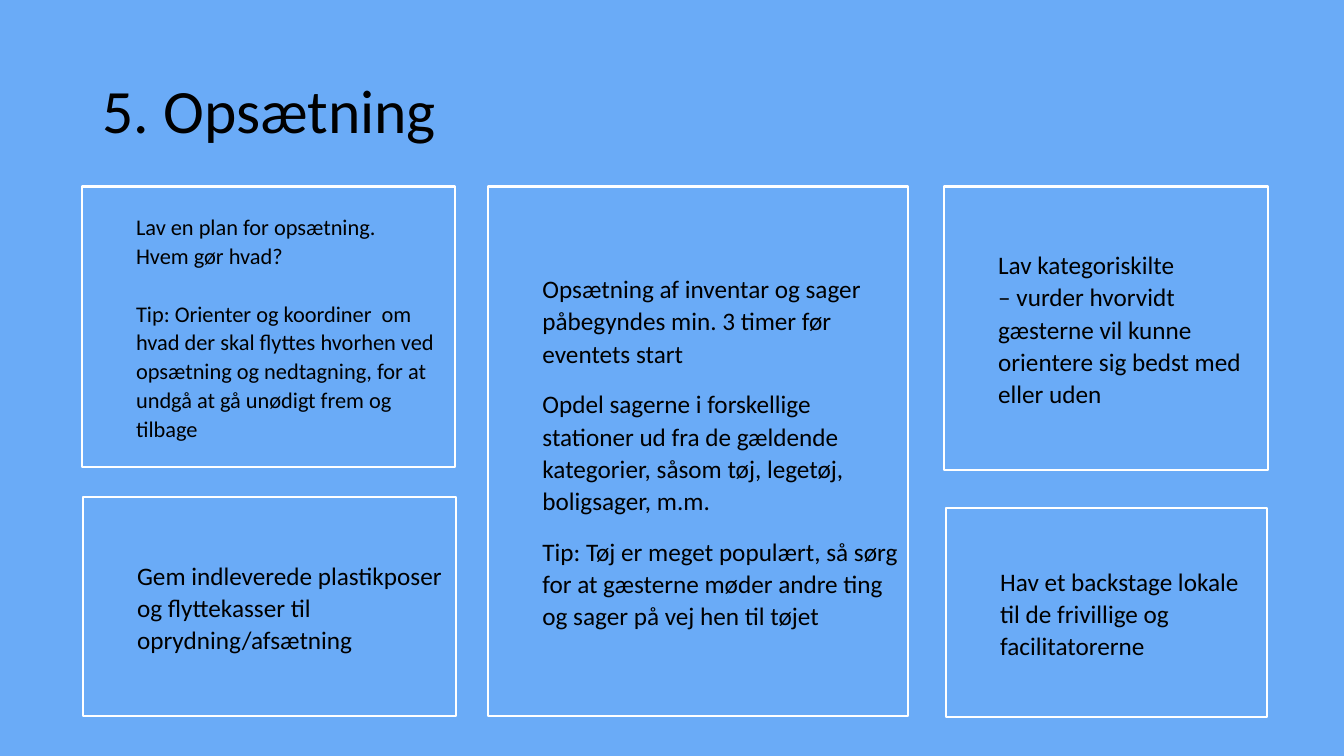
from pptx import Presentation
from pptx.dml.color import RGBColor
from pptx.enum.shapes import MSO_SHAPE
from pptx.enum.text import MSO_ANCHOR, PP_ALIGN
from pptx.util import Inches, Pt

FONT = "Calibri"
SKY, WHITE, BLACK = "6AABF7", "FFFFFF", "000000"
CARD_TOP = 1.85

# Each card: box (left, top, width, height), text size, space after, paragraphs
CARDS = [
    ((0.81, CARD_TOP, 3.7, 2.78), 16, 15.5, [
        "Lav en plan for opsætning. \vHvem gør hvad?",
        "Tip: Orienter og koordiner  om hvad der skal flyttes hvorhen ved "
        "opsætning og nedtagning, for at undgå at gå unødigt frem og tilbage",
    ]),
    ((0.82, 4.93, 3.7, 2.17), 18, 0, [
        "Gem indleverede plastikposer og flyttekasser til oprydning/afsætning",
    ]),
    ((4.84, CARD_TOP, 4.17, 5.25), 18, 8, [
        "Opsætning af inventar og sager påbegyndes min. 3 timer før "
        "eventets start",
        "Opdel sagerne i forskellige stationer ud fra de gældende "
        "kategorier, såsom tøj, legetøj, boligsager, m.m.",
        "Tip: Tøj er meget populært, så sørg for at gæsterne møder andre "
        "ting og sager på vej hen til tøjet",
    ]),
    ((9.36, CARD_TOP, 3.22, 2.81), 18, 8, [
        "Lav kategoriskilte \v– vurder hvorvidt gæsterne vil kunne "
        "orientere sig bedst med eller uden",
    ]),
    ((9.38, 5.04, 3.19, 2.07), 18, 0, [
        "Hav et backstage lokale til de frivillige og facilitatorerne",
    ]),
]


def color(hex_code):
    return RGBColor.from_string(hex_code)


def format_paragraph(paragraph, size, line_spacing):
    paragraph.alignment = PP_ALIGN.LEFT
    paragraph.line_spacing = line_spacing
    for run in paragraph.runs:
        run.font.name = FONT
        run.font.size = Pt(size)
        run.font.color.rgb = color(BLACK)


def add_heading(slide, box, wording):
    heading = slide.shapes.add_textbox(*map(Inches, box)).text_frame
    heading.word_wrap = True
    heading.vertical_anchor = MSO_ANCHOR.MIDDLE
    heading.text = wording
    format_paragraph(heading.paragraphs[0], 44, 0.9)


def add_card(slide, box, size, space_after, advice):
    # White outline
    card = slide.shapes.add_shape(MSO_SHAPE.RECTANGLE, *map(Inches, box))
    card.shadow.inherit = False
    card.fill.background()
    card.line.color.rgb = color(WHITE)
    card.line.width = Pt(1.5)

    # Advice, set in from the left edge
    frame = card.text_frame
    frame.word_wrap = True
    frame.vertical_anchor = MSO_ANCHOR.MIDDLE
    frame.margin_left, frame.margin_right = Inches(0.54), Inches(0.1)
    frame.margin_top = frame.margin_bottom = Inches(0.05)
    frame.text = "\n".join(advice)
    for paragraph in frame.paragraphs:
        format_paragraph(paragraph, size, 1.07)
        paragraph.space_before = Pt(5)
        paragraph.space_after = Pt(space_after)
    # The last paragraph keeps the usual gap at most
    frame.paragraphs[-1].space_after = Pt(min(space_after, 8))


def main():
    deck = Presentation()
    deck.slide_width, deck.slide_height = Inches(13.33), Inches(7.5)
    slide = deck.slides.add_slide(deck.slide_layouts[6])
    slide.background.fill.solid()
    slide.background.fill.fore_color.rgb = color(SKY)

    add_heading(slide, (0.92, 0.4, 11.5, 1.45), "5. Opsætning")
    for card in CARDS:
        add_card(slide, *card)
    deck.save("out.pptx")


if __name__ == "__main__":
    main()
